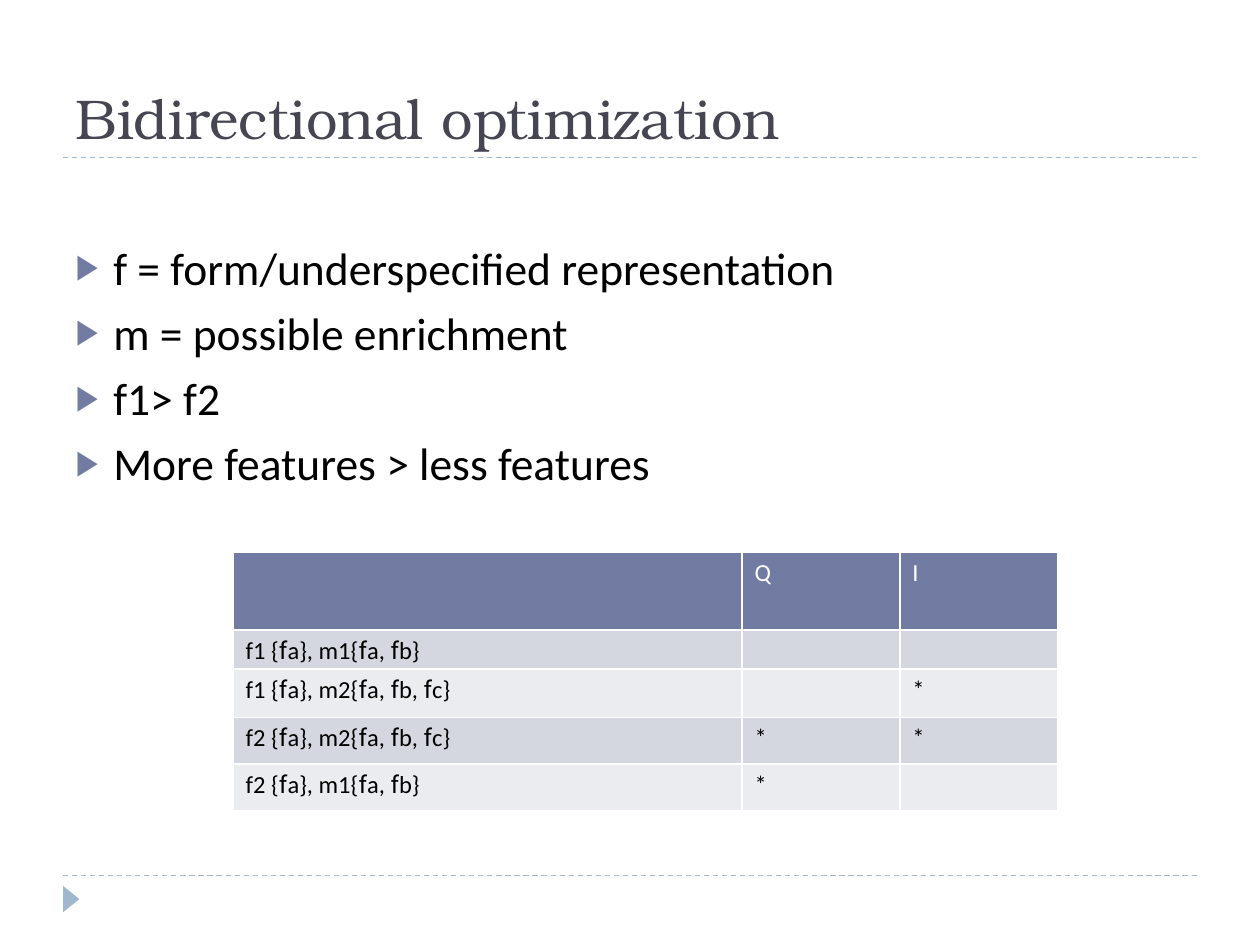
from dataclasses import dataclass

from lxml.etree import SubElement
from pptx import Presentation
from pptx.dml.color import RGBColor
from pptx.enum.dml import MSO_LINE
from pptx.enum.shapes import MSO_CONNECTOR, MSO_SHAPE
from pptx.enum.text import MSO_ANCHOR, MSO_AUTO_SIZE, PP_ALIGN
from pptx.oxml.ns import qn
from pptx.util import Cm, Pt


@dataclass(frozen=True)
class Theme:
    title_font: str = "TeX Gyre Bonum"
    body_font: str = "Calibri"
    feature_font: str = "Roboto"
    title_size: int = 32
    body_size: int = 26
    table_size: int = 14
    title_color: str = "464653"
    text_color: str = "000000"
    light_color: str = "FFFFFF"
    accent_color: str = "727CA3"
    rule_color: str = "9FB8CD"
    band_colors: tuple = ("D5D7E0", "EBECF0")


class SlideBuilder:
    def __init__(self, slide, theme):
        self.slide = slide
        self.theme = theme

    def style(self, font, name, size, color):
        font.name = name
        font.size = Pt(size)
        font.bold = False
        font.color.rgb = RGBColor.from_string(color)

    def place(self, shape, left, top, width, height):
        shape.left, shape.top = Cm(left), Cm(top)
        shape.width, shape.height = Cm(width), Cm(height)

    def rule(self, left, right, y):
        line = self.slide.shapes.add_connector(
            MSO_CONNECTOR.STRAIGHT, Cm(left), Cm(y), Cm(right), Cm(y))
        line.line.color.rgb = RGBColor.from_string(self.theme.rule_color)
        line.line.width = Pt(0.75)
        line.line.dash_style = MSO_LINE.DASH
        SubElement(line._element.spPr, qn("a:effectLst"))

    def marker(self, left, top, width, height):
        shape = self.slide.shapes.add_shape(
            MSO_SHAPE.ISOSCELES_TRIANGLE, Cm(left), Cm(top), Cm(width), Cm(height))
        shape.rotation = 90
        shape.shadow.inherit = False
        shape.fill.solid()
        shape.fill.fore_color.rgb = RGBColor.from_string(self.theme.rule_color)
        shape.line.fill.background()

    def title(self, text, *box):
        shape = self.slide.shapes.title
        self.place(shape, *box)
        frame = shape.text_frame
        frame.text = text
        frame.auto_size = MSO_AUTO_SIZE.NONE
        frame.vertical_anchor = MSO_ANCHOR.BOTTOM
        paragraph = frame.paragraphs[0]
        paragraph.alignment = PP_ALIGN.LEFT
        theme = self.theme
        self.style(paragraph.font, theme.title_font, theme.title_size, theme.title_color)

    def bullet(self, paragraph, indent):
        properties = paragraph._p.get_or_add_pPr()
        properties.set("marL", str(Cm(indent)))
        properties.set("indent", str(-Cm(indent)))
        color = SubElement(properties, qn("a:buClr"))
        SubElement(color, qn("a:srgbClr"), val=self.theme.accent_color)
        SubElement(properties, qn("a:buSzPct"), val="76000")
        SubElement(properties, qn("a:buChar"), char="▶")

    def bullets(self, lines, top_margin, *box):
        shape = self.slide.placeholders[1]
        self.place(shape, *box)
        frame = shape.text_frame
        frame.text = "\n".join(lines)
        frame.auto_size = MSO_AUTO_SIZE.NONE
        frame.margin_top = Cm(top_margin)
        theme = self.theme
        for paragraph in frame.paragraphs:
            paragraph.space_before = Pt(6)
            self.bullet(paragraph, 0.76)
            self.style(paragraph.font, theme.body_font, theme.body_size, theme.text_color)

    def cell(self, cell, text, fill, color):
        theme = self.theme
        cell.fill.solid()
        cell.fill.fore_color.rgb = RGBColor.from_string(fill)
        cell.margin_bottom = 0
        paragraph = cell.text_frame.paragraphs[0]
        self.style(paragraph.font, theme.body_font, theme.table_size, color)
        for position, piece in enumerate(text.split("|")):
            if piece:
                run = paragraph.add_run()
                run.text = piece
                if position % 2:
                    run.font.name = theme.feature_font

    def table(self, rows, left, top, widths, heights):
        theme = self.theme
        table = self.slide.shapes.add_table(
            len(rows), len(widths), Cm(left), Cm(top),
            Cm(sum(widths)), Cm(sum(heights))).table
        for column, width in zip(table.columns, widths):
            column.width = Cm(width)
        for index, (row, height, texts) in enumerate(zip(table.rows, heights, rows)):
            row.height = Cm(height)
            header = index == 0
            fill = theme.accent_color if header else theme.band_colors[(index - 1) % 2]
            color = theme.light_color if header else theme.text_color
            for cell, text in zip(row.cells, texts):
                self.cell(cell, text, fill, color)


def main():
    presentation = Presentation()
    presentation.slide_width, presentation.slide_height = Cm(25.4), Cm(19.05)
    slide = presentation.slides.add_slide(presentation.slide_layouts[1])
    builder = SlideBuilder(slide, Theme())

    for y in (17.65, 3.18):
        builder.rule(1.27, 24.13, y)
    builder.marker(1.17, 17.96, 0.53, 0.33)
    builder.title("Bidirectional optimization", 1.27, 0.43, 22.86, 2.74)
    builder.bullets(
        ["f = form/underspecified representation", "m = possible enrichment",
         "f1> f2", "More features > less features"],
        1.45, 1.27, 3.38, 22.86, 13.72)
    builder.table(
        [("", "Q", "I"),
         ("f1 {|f|a}, m1{|f|a, |f|b}", "", ""),
         ("f1 {|f|a}, m2{|f|a, |f|b, |f|c}", "", "*"),
         ("f2 {|f|a}, m2{|f|a, |f|b, |f|c}", "*", "*"),
         ("f2 {|f|a}, m1{|f|a, |f|b}", "*", "")],
        4.7, 11.13, (10.26, 3.18, 3.18), (1.57, 0.79, 0.97, 0.94, 0.94))

    presentation.save("out.pptx")


if __name__ == "__main__":
    main()
